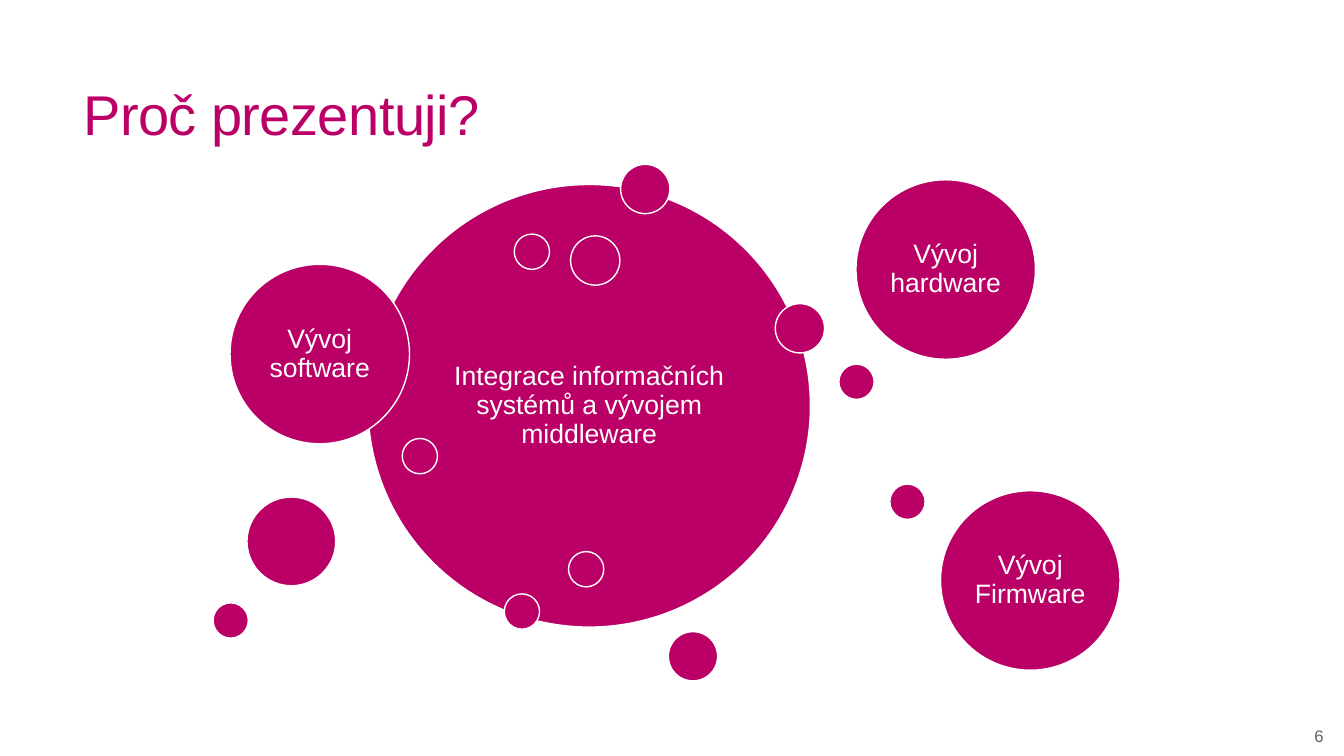
from pptx import Presentation
from pptx.dml.color import RGBColor
from pptx.enum import shapes, text
from pptx.util import Pt

TITLE = "Proč prezentuji?"
NUMBER = "6"

# Bubbles from back to front: size name, left, top, label
BUBBLES = [
    ("huge", 262.8, 131.8, "Integrace informačních systémů a vývojem middleware"),
    ("small", 443.3, 117.4, ""),
    ("tiny", 360.2, 424.2, ""),
    ("tiny", 599.2, 260.1, ""),
    ("small", 477.4, 451.2, ""),
    ("tiny", 367.3, 167.2, ""),
    ("tiny", 287.3, 313.2, ""),
    ("large", 164.3, 188.8, "Vývoj software"),
    ("small", 407.6, 168.5, ""),
    ("medium", 176.4, 355, ""),
    ("large", 611.4, 128.4, "Vývoj hardware"),
    ("small", 553.8, 216.9, ""),
    ("tiny", 152.2, 430.6, ""),
    ("tiny", 406.1, 394, ""),
    ("large", 671.8, 350.5, "Vývoj Firmware"),
    ("tiny", 635.6, 345.8, ""),
]
SIZES = {"huge": 316.1, "large": 128.2, "medium": 63.4, "small": 35.2, "tiny": 25.2}

THEME = {
    "font": "Arial",
    "main": RGBColor(0xBA, 0x00, 0x66),
    "light": RGBColor(0xFF, 0xFF, 0xFF),
    "grey": RGBColor(0x64, 0x64, 0x64),
    "title": Pt(40),
    "label": Pt(19),
    "number": Pt(12),
}
ALIGN = text.PP_ALIGN


def write(shape, words, size, color, align, spacing=1.0, inset=None):
    """Put one styled, vertically centred paragraph in the shape; return its run."""
    frame = shape.text_frame
    form = {"word_wrap": True, "vertical_anchor": text.MSO_ANCHOR.MIDDLE}
    if inset is not None:
        for side in ("left", "right", "top", "bottom"):
            form[f"margin_{side}"] = inset
    for key, value in form.items():
        setattr(frame, key, value)
    para = frame.paragraphs[0]
    para.alignment = align
    para.line_spacing = spacing
    run = para.add_run()
    run.text = words
    for key, value in {"name": THEME["font"], "size": THEME[size]}.items():
        setattr(run.font, key, value)
    run.font.color.rgb = THEME[color]
    return run


def bubble(group, size, left, top, label):
    side = Pt(SIZES[size])
    disc = group.shapes.add_shape(
        shapes.MSO_SHAPE.OVAL, Pt(left), Pt(top), side, side)
    disc.shadow.inherit = False
    disc.fill.solid()
    disc.fill.fore_color.rgb = THEME["main"]
    disc.line.color.rgb = THEME["light"]
    disc.line.width = Pt(1)
    if label:
        write(disc, label, "label", "light", ALIGN.CENTER, 0.9, Pt(5))


def main():
    deck = Presentation()
    deck.slide_width, deck.slide_height = Pt(960), Pt(540)
    slide = deck.slides.add_slide(deck.slide_layouts[6])

    head = slide.shapes.add_textbox(Pt(52.6), Pt(54), Pt(847.4), Pt(59.8))
    run = write(head, TITLE, "title", "main", ALIGN.LEFT, 0.9)
    run.font._element.set("spc", "-40")

    group = slide.shapes.add_group_shape()
    for item in BUBBLES:
        bubble(group, *item)

    foot = slide.shapes.add_textbox(Pt(889.2), Pt(511.2), Pt(63.4), Pt(28.8))
    write(foot, NUMBER, "number", "grey", ALIGN.RIGHT)

    deck.save("out.pptx")


if __name__ == "__main__":
    main()
